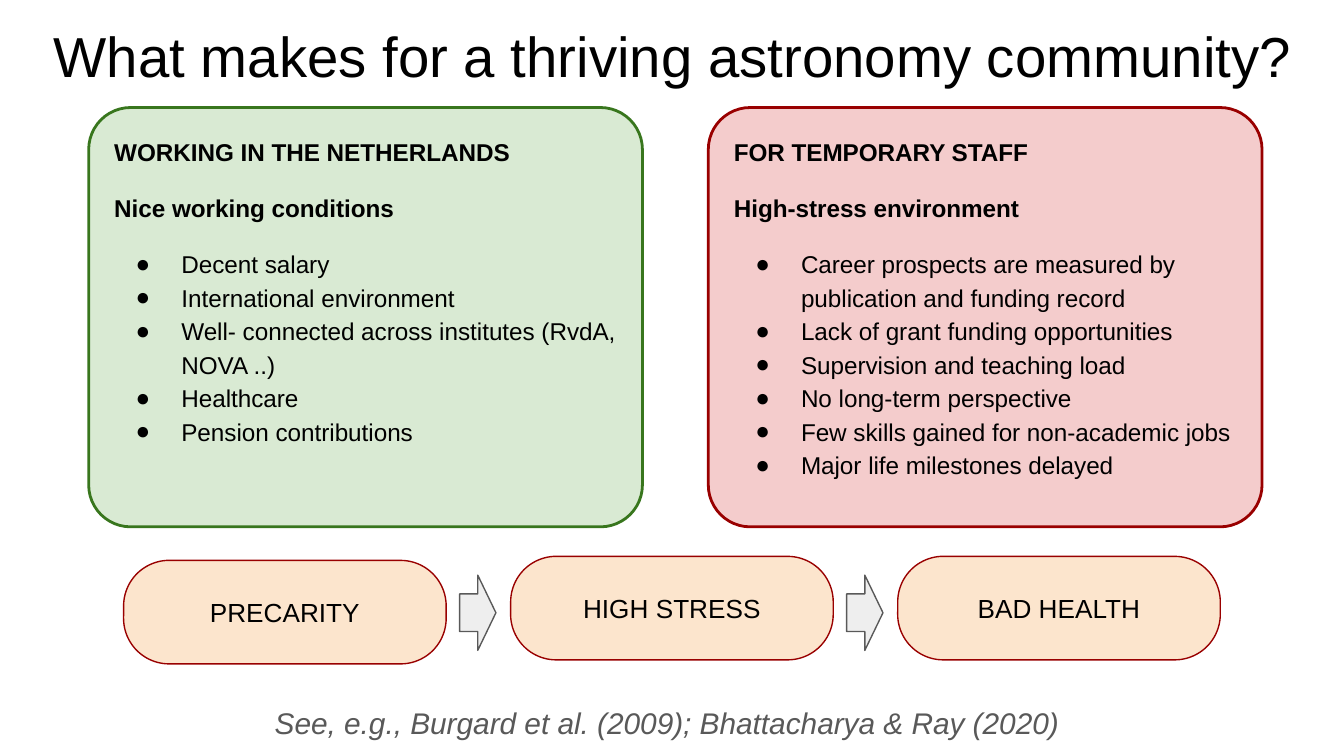
from dataclasses import dataclass

from lxml import etree
from pptx import Presentation
from pptx import util as u
from pptx.dml.color import RGBColor
from pptx.enum import shapes, text
from pptx.oxml import ns

FONT = "Arial"
BLACK = RGBColor(0x00, 0x00, 0x00)
GRAY = RGBColor(0x59, 0x59, 0x59)
LIGHT_GRAY = RGBColor(0xEE, 0xEE, 0xEE)
GREEN = RGBColor(0x38, 0x76, 0x1D)
LIGHT_GREEN = RGBColor(0xD9, 0xEA, 0xD3)
RED = RGBColor(0x99, 0x00, 0x00)
LIGHT_RED = RGBColor(0xF4, 0xCC, 0xCC)
PEACH = RGBColor(0xFC, 0xE5, 0xCD)

SLIDE_WIDTH = u.Inches(10)
SLIDE_HEIGHT = SLIDE_WIDTH * 9 // 16
STEP_LEFT, STEP_PITCH, ARROW_OFFSET = 0.92, 2.88, 2.5


@dataclass(frozen=True)
class Area:
    left: float
    top: float
    width: float
    height: float

    def lengths(self) -> tuple:
        return tuple(u.Inches(n) for n in (self.left, self.top, self.width, self.height))


@dataclass(frozen=True)
class Panel:
    left: float
    fill: RGBColor
    border: RGBColor
    headings: tuple[str, ...]
    points: tuple[str, ...]


@dataclass(frozen=True)
class Step:
    label: str
    top: float


PANELS = (
    Panel(0.66, LIGHT_GREEN, GREEN,
          ("WORKING IN THE NETHERLANDS", "Nice working conditions"),
          ("Decent salary",
           "International environment",
           "Well- connected across institutes (RvdA, NOVA ..)",
           "Healthcare",
           "Pension contributions")),
    Panel(5.27, LIGHT_RED, RED,
          ("FOR TEMPORARY STAFF", "High-stress environment"),
          ("Career prospects are measured by publication and funding record",
           "Lack of grant funding opportunities",
           "Supervision and teaching load",
           "No long-term perspective",
           "Few skills gained for non-academic jobs",
           "Major life milestones delayed")),
)

STEPS = (Step("PRECARITY", 4.17), Step("HIGH STRESS", 4.14), Step("BAD HEALTH", 4.14))


def prepare_frame(box, anchor=text.MSO_ANCHOR.TOP):
    frame = box.text_frame
    frame.word_wrap = True
    frame.vertical_anchor = anchor
    frame.margin_left = frame.margin_right = u.Inches(0.1)
    frame.margin_top = frame.margin_bottom = u.Inches(0.1)
    return frame


def add_span(para, words: str, size: float, color: RGBColor = BLACK,
             bold: bool = False, italic: bool = False) -> None:
    span = para.add_run()
    span.text = words
    span.font.name = FONT
    span.font.size = u.Pt(size)
    span.font.color.rgb = color
    span.font.bold = bold
    span.font.italic = italic


def add_bullet(para, size: float) -> None:
    props = para._p.get_or_add_pPr()
    props.set("marL", str(u.Inches(0.5)))
    props.set("indent", str(u.Inches(-0.34)))
    color = etree.SubElement(props, ns.qn("a:buClr"))
    etree.SubElement(color, ns.qn("a:srgbClr")).set("val", str(BLACK))
    etree.SubElement(props, ns.qn("a:buSzPts")).set("val", str(int(size * 100)))
    etree.SubElement(props, ns.qn("a:buFont")).set("typeface", FONT)
    etree.SubElement(props, ns.qn("a:buChar")).set("char", "●")


def add_shape(page, kind, area: Area, fill: RGBColor, border: RGBColor,
              width: float, *adjustments: float):
    shape = page.shapes.add_shape(kind, *area.lengths())
    shape.shadow.inherit = False
    shape.fill.solid()
    shape.fill.fore_color.rgb = fill
    shape.line.color.rgb = border
    shape.line.width = u.Pt(width)
    for index, value in enumerate(adjustments):
        shape.adjustments[index] = value
    return shape


def add_line_of_text(page, area: Area, words: str, size: float, color: RGBColor,
                     italic: bool = False) -> None:
    box = page.shapes.add_textbox(*area.lengths())
    para = prepare_frame(box).paragraphs[0]
    para.alignment = text.PP_ALIGN.CENTER
    add_span(para, words, size, color, italic=italic)


def add_panel(page, panel: Panel) -> None:
    box = add_shape(page, shapes.MSO_SHAPE.ROUNDED_RECTANGLE,
                    Area(panel.left, 0.8, 4.12, 3.12), panel.fill, panel.border, 1.5, 0.1)
    frame = prepare_frame(box)
    heading_count = len(panel.headings)
    for index, words in enumerate(panel.headings + panel.points):
        is_heading = index < heading_count
        para = frame.add_paragraph() if index else frame.paragraphs[0]
        if not is_heading:
            add_bullet(para, 13)
        para.alignment = text.PP_ALIGN.LEFT
        para.line_spacing = 1.15
        if 0 < index <= heading_count:
            para.space_before = u.Pt(12)
        add_span(para, words, 13, bold=is_heading)


def add_step(page, step: Step, left: float) -> None:
    box = add_shape(page, shapes.MSO_SHAPE.ROUNDED_RECTANGLE,
                    Area(left, step.top, 2.4, 0.77), PEACH, RED, 0.75, 0.44)
    para = prepare_frame(box, text.MSO_ANCHOR.MIDDLE).paragraphs[0]
    para.alignment = text.PP_ALIGN.CENTER
    add_span(para, step.label, 14)


def main() -> None:
    deck = Presentation()
    deck.slide_width, deck.slide_height = SLIDE_WIDTH, SLIDE_HEIGHT
    page = deck.slides.add_slide(deck.slide_layouts[6])

    add_line_of_text(page, Area(0.25, 0.06, 9.52, 0.63),
                     "What makes for a thriving astronomy community?", 30.2, BLACK)
    for panel in PANELS:
        add_panel(page, panel)
    add_line_of_text(page, Area(1.64, 5.14, 6.71, 0.47),
                     "See, e.g., Burgard et al. (2009); Bhattacharya & Ray (2020) ",
                     16, GRAY, italic=True)
    for index, step in enumerate(STEPS):
        left = STEP_LEFT + index * STEP_PITCH
        add_step(page, step, left)
        if index < len(STEPS) - 1:
            add_shape(page, shapes.MSO_SHAPE.RIGHT_ARROW,
                      Area(left + ARROW_OFFSET, 4.28, 0.27, 0.56),
                      LIGHT_GRAY, GRAY, 0.75, 0.5, 0.5)

    deck.save("out.pptx")


if __name__ == "__main__":
    main()
